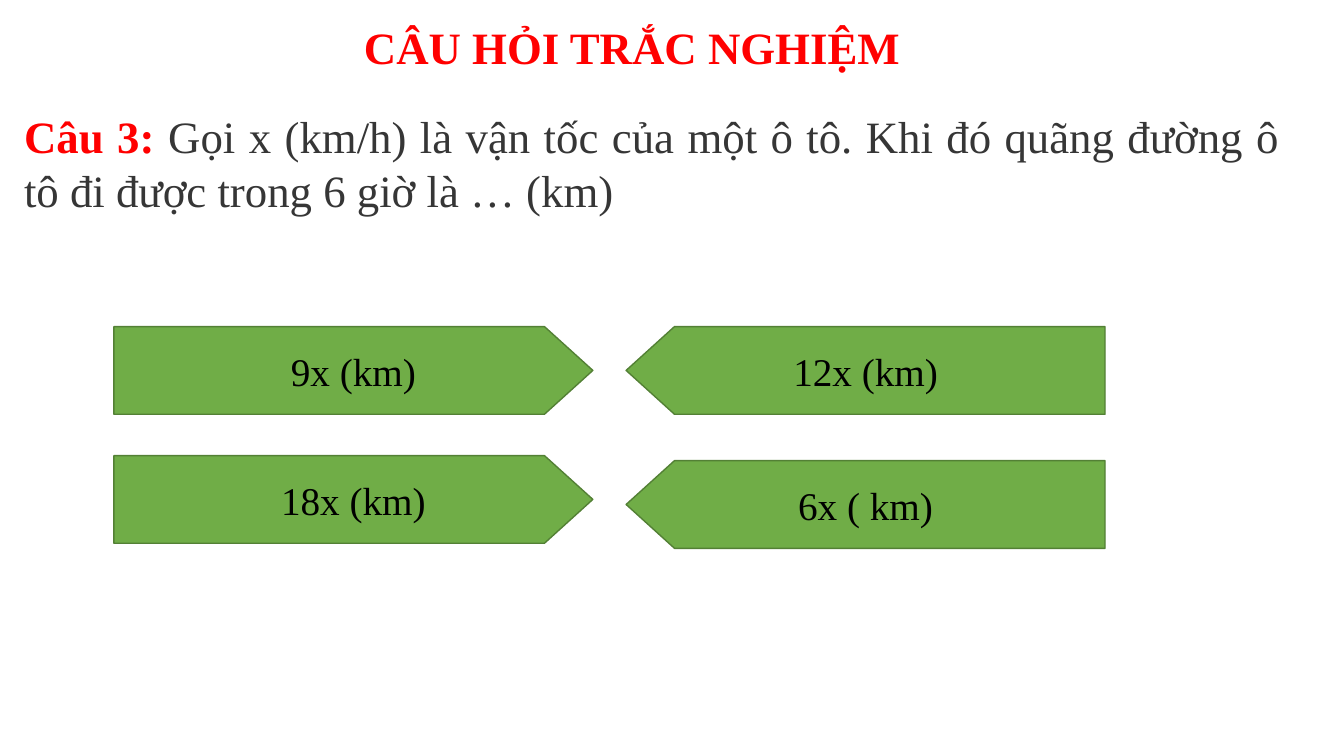
from dataclasses import dataclass

from pptx import Presentation
from pptx import util as u
from pptx.dml.color import RGBColor
from pptx.enum import text as t

FONT = "Times New Roman"
HUES = {"red": "FF0000", "gray": "363636", "black": "000000",
        "green": "70AD47", "edge": "538035", "white": "FFFFFF"}
WIDE, HIGH, TIP = 4.75, 0.87, 0.48
LEFT, RIGHT = 1.13, 6.21


@dataclass
class Choice:
    label: str
    x: float
    y: float
    flip: bool


CHOICES = [
    Choice("6x ( km)", RIGHT, 4.57, True),
    Choice("18x (km)", LEFT, 4.52, False),
    Choice("12x (km)", RIGHT, 3.24, True),
    Choice("9x (km)", LEFT, 3.24, False),
]


def hue(name: str) -> RGBColor:
    return RGBColor.from_string(HUES[name])


def add_run(para, words: str, size: int, color: str, bold: bool = False) -> None:
    run = para.add_run()
    run.text = words
    font = run.font
    font.name, font.size, font.bold = FONT, u.Pt(size), bold
    font.color.rgb = hue(color)


def place(shape, x: float, y: float, wide: float, high: float):
    """Move a text shape, set its frame and return its first paragraph."""
    shape.left, shape.top = u.Inches(x), u.Inches(y)
    shape.width, shape.height = u.Inches(wide), u.Inches(high)
    frame = shape.text_frame
    frame.word_wrap = True
    frame.auto_size = t.MSO_AUTO_SIZE.SHAPE_TO_FIT_TEXT
    frame.vertical_anchor = t.MSO_ANCHOR.TOP
    return frame.paragraphs[0]


def add_choice(slide, item: Choice) -> None:
    """Draw an answer box whose tip points right, or left if flipped."""
    back, neck, tip = 0, WIDE - TIP, WIDE
    if item.flip:
        back, neck, tip = WIDE, TIP, 0
    corners = [(back, 0), (neck, 0), (tip, HIGH / 2), (neck, HIGH), (back, HIGH)]
    points = [(u.Inches(item.x + dx), u.Inches(item.y + dy)) for dx, dy in corners]
    pen = slide.shapes.build_freeform(*points[0])
    pen.add_line_segments(points[1:], close=True)
    shape = pen.convert_to_shape()
    shape.shadow.inherit = False
    shape.fill.solid()
    shape.fill.fore_color.rgb = hue("green")
    shape.line.color.rgb = hue("edge")
    shape.line.width = u.Pt(1)
    frame = shape.text_frame
    frame.word_wrap = True
    frame.vertical_anchor = t.MSO_ANCHOR.MIDDLE
    para = frame.paragraphs[0]
    para.alignment = t.PP_ALIGN.CENTER
    add_run(para, item.label, 28, "black")


def main() -> None:
    deck = Presentation()
    deck.slide_width, deck.slide_height = u.Inches(13.33), u.Inches(7.5)
    slide = deck.slides.add_slide(deck.slide_layouts[5])
    slide.background.fill.solid()
    slide.background.fill.fore_color.rgb = hue("white")

    para = place(slide.shapes.title, 3.51, 0.15, 6.15, 0.64)
    para.alignment = t.PP_ALIGN.LEFT
    add_run(para, "CÂU HỎI TRẮC NGHIỆM", 32, "red", True)

    for item in CHOICES:
        add_choice(slide, item)

    para = place(slide.shapes.add_textbox(0, 0, 0, 0), 0.14, 1.03, 12.66, 1.18)
    para.alignment = t.PP_ALIGN.JUSTIFY
    add_run(para, "Câu 3: ", 32, "red", True)
    add_run(para, "Gọi x (km/h) là vận tốc của một ô tô. Khi đó quãng đường "
            "ô tô đi được trong 6 giờ là … (km)", 32, "gray")
    deck.save("out.pptx")


if __name__ == "__main__":
    main()
